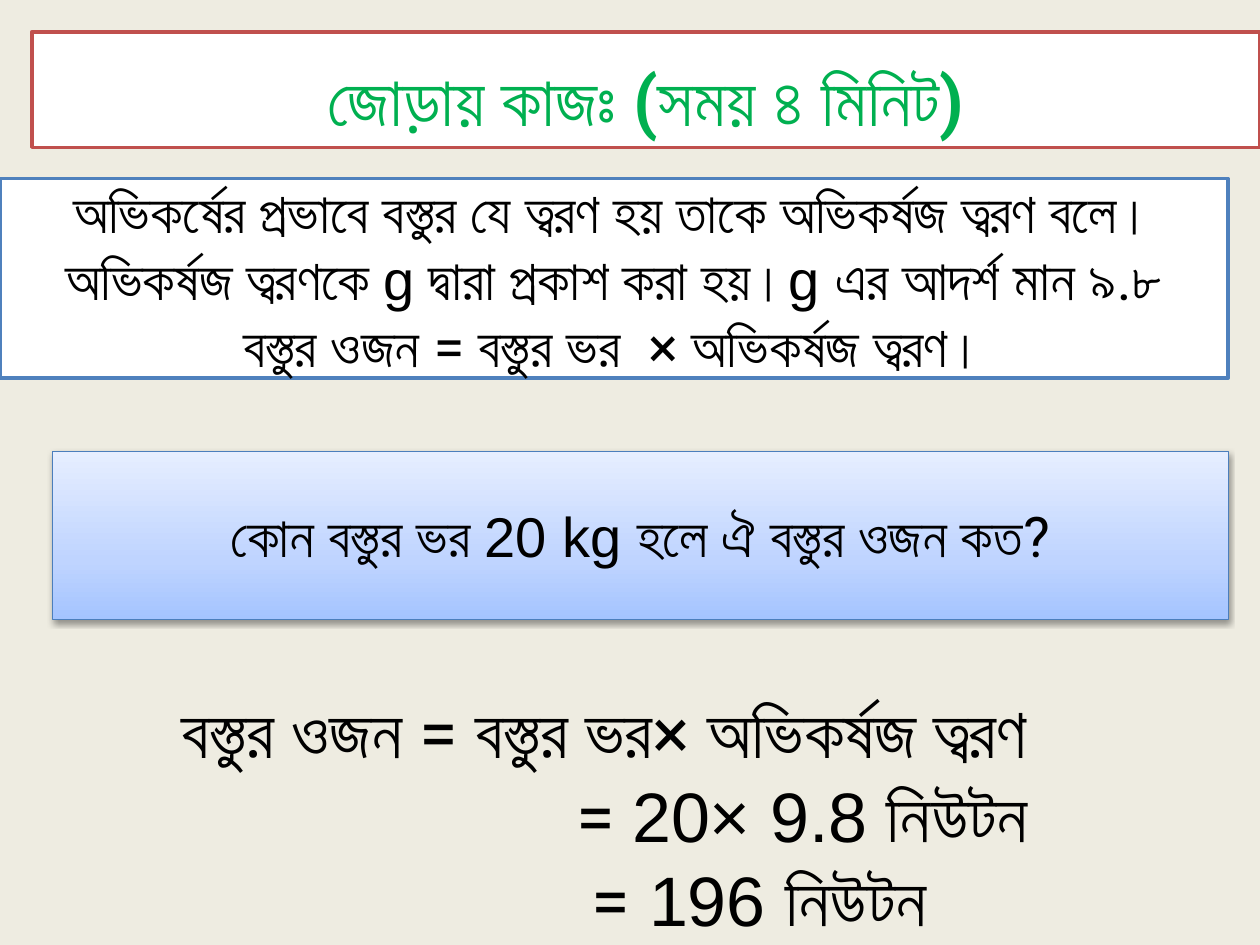
from copy import deepcopy

from pptx import Presentation
from pptx.dml.color import RGBColor
from pptx.enum.shapes import MSO_SHAPE
from pptx.enum.text import MSO_ANCHOR, MSO_AUTO_SIZE, PP_ALIGN
from pptx.oxml import parse_xml
from pptx.oxml.ns import nsdecls, qn
from pptx.util import Cm, Pt

RECTANGLE = MSO_SHAPE.RECTANGLE
MIDDLE, TOP = MSO_ANCHOR.MIDDLE, MSO_ANCHOR.TOP
CENTER, LEFT = PP_ALIGN.CENTER, PP_ALIGN.LEFT
NO_FIT = MSO_AUTO_SIZE.NONE

COLORS = {
    "background": "EEECE1",
    "panel": "FFFFFF",
    "title": "00B050",
    "text": "000000",
    "title_line": "C0504D",
    "definition_line": "4F81BD",
    "question_line": "4B7EBC",
}
QUESTION_STOPS = [(0, "A4C4FF"), (0.35, "BFD4FF"), (1, "E6EEFF")]
BANGLA, LATIN = "Roboto", "Arial"


def color(name):
    return RGBColor.from_string(COLORS[name])


class Lesson:
    def __init__(self, slide):
        self.slide = slide
        background = slide.background.fill
        background.solid()
        background.fore_color.rgb = color("background")

    def add_lines(self, shape, lines, size, tone="text", bold=False,
                  anchor=MIDDLE, insets=(0.25, 0, 0.25, 0), indents=None):
        frame = shape.text_frame
        frame.word_wrap = True
        frame.auto_size = NO_FIT
        frame.vertical_anchor = anchor
        (frame.margin_left, frame.margin_top,
         frame.margin_right, frame.margin_bottom) = map(Cm, insets)
        for index, line in enumerate(lines):
            paragraph = frame.paragraphs[0] if index == 0 else frame.add_paragraph()
            indent = indents[index] if indents else 0
            paragraph.alignment = LEFT if indent else CENTER
            if indent:
                paragraph._p.get_or_add_pPr().set("marL", str(Cm(indent)))
            for words, typeface in line:
                run = paragraph.add_run()
                run.text = words
                font = run.font
                font.name, font.size, font.bold = typeface, Pt(size), bold
                font.color.rgb = color(tone)
                run._r.get_or_add_rPr().append(
                    parse_xml(f'<a:cs {nsdecls("a")} typeface="{typeface}"/>'))

    def outline(self, shape, tone, width):
        shape.line.color.rgb = color(tone)
        shape.line.width = Pt(width)

    def title(self, box, lines):
        heading = self.slide.shapes.title
        heading.left, heading.top, heading.width, heading.height = map(Cm, box)
        heading.fill.solid()
        heading.fill.fore_color.rgb = color("panel")
        self.outline(heading, "title_line", 2)
        self.add_lines(heading, lines, 40, "title", True, insets=(0.25, 0.35, 0.25, 0))

    def panel(self, box, lines, line_tone, line_width):
        panel = self.slide.shapes.add_shape(RECTANGLE, *map(Cm, box))
        panel.shadow.inherit = False
        panel.fill.solid()
        panel.fill.fore_color.rgb = color("panel")
        self.outline(panel, line_tone, line_width)
        self.add_lines(panel, lines, 32)
        return panel

    def shade(self, panel, stops):
        panel.fill.gradient()
        panel.fill.gradient_angle = 90
        properties = panel._element.spPr
        stop_list = properties.find(qn("a:gradFill")).find(qn("a:gsLst"))
        stop_list.insert(1, deepcopy(stop_list[0]))
        for stop, (position, tone) in zip(panel.fill.gradient_stops, stops):
            stop.position = position
            stop.color.rgb = RGBColor.from_string(tone)
        properties.find(qn("a:effectLst")).append(parse_xml(
            f'<a:outerShdw {nsdecls("a")} blurRad="40000" dist="20000" '
            'dir="5400000" rotWithShape="0"><a:srgbClr val="000000">'
            '<a:alpha val="38000"/></a:srgbClr></a:outerShdw>'))

    def working(self, box, lines, indents):
        working = self.slide.shapes.add_textbox(*map(Cm, box))
        self.add_lines(working, lines, 40, anchor=TOP,
                       insets=(0.25, 0.13, 0.25, 0.13), indents=indents)


def main():
    deck = Presentation()
    deck.slide_width, deck.slide_height = Cm(25.4), Cm(19.05)
    lesson = Lesson(deck.slides.add_slide(deck.slide_layouts[5]))

    lesson.title((0.64, 0.64, 24.76, 2.33), [[("জোড়ায় কাজঃ (সময় ৪ মিনিট)", BANGLA)]])

    definition = [
        [("অভিকর্ষের প্রভাবে বস্তুর যে ত্বরণ হয় তাকে অভিকর্ষজ ত্বরণ বলে।", BANGLA)],
        [("অভিকর্ষজ ত্বরণকে ", BANGLA), ("g", LATIN),
         (" দ্বারা প্রকাশ করা হয়।", BANGLA), ("g ", LATIN),
         ("এর আদর্শ মান ৯.৮", BANGLA)],
        [("বস্তুর ওজন = বস্তুর ভর  × অভিকর্ষজ ত্বরণ।", BANGLA)],
    ]
    lesson.panel((0, 3.6, 24.76, 4.02), definition, "definition_line", 2)

    question = [[("কোন বস্তুর ভর ", BANGLA), ("20 kg ", LATIN),
                 ("হলে ঐ বস্তুর ওজন কত?", BANGLA)]]
    question_panel = lesson.panel((1.06, 9.1, 23.7, 3.39), question, "question_line", 0.75)
    lesson.shade(question_panel, QUESTION_STOPS)

    answer = [
        [("বস্তুর ওজন = বস্তুর ভর× অভিকর্ষজ ত্বরণ", BANGLA)],
        [("= ", BANGLA), ("20× 9.8 ", LATIN), ("নিউটন", BANGLA)],
        [("=", BANGLA), (" 196 ", LATIN), ("নিউটন", BANGLA)],
    ]
    lesson.working((2.12, 13.76, 20.11, 5.38), answer, (0, 9.25, 9.55))

    deck.save("out.pptx")


if __name__ == "__main__":
    main()
